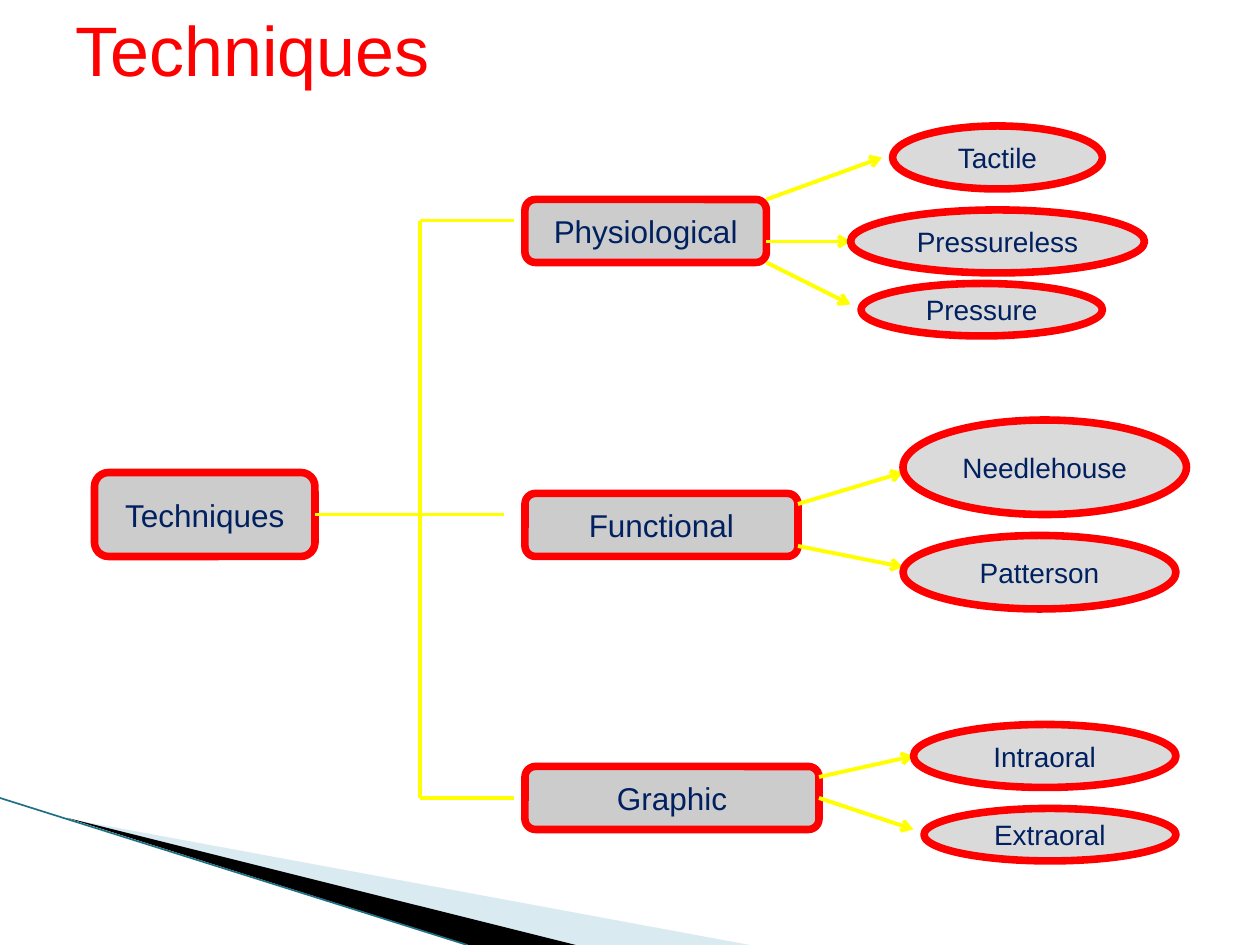
from lxml import etree
from pptx import Presentation
from pptx.dml.color import RGBColor
from pptx.enum.shapes import MSO_CONNECTOR, MSO_SHAPE
from pptx.enum.text import MSO_ANCHOR, PP_ALIGN
from pptx.oxml.ns import qn
from pptx.util import Inches, Pt

ROUNDED, OVAL = MSO_SHAPE.ROUNDED_RECTANGLE, MSO_SHAPE.OVAL
STRAIGHT = MSO_CONNECTOR.STRAIGHT
MIDDLE, TOP = MSO_ANCHOR.MIDDLE, MSO_ANCHOR.TOP
CENTER, LEFT = PP_ALIGN.CENTER, PP_ALIGN.LEFT

COLORS = {
    "title": "FF0000", "border": "FF0000", "text": "002060",
    "box": "CCCCCC", "oval": "DADADA", "link": "FFFF00",
    "pale": "A0CBDC", "black": "000000", "edge": "1F7084",
}
CELL = Inches(1) // 12  # the diagram sits on a grid of twelve cells per inch
TRUNK = 40

ROOT = ("Techniques", (9, 45, 21, 8))
# Branch: label, box (column, row, columns, rows), stem end, stem row, leaves.
# Leaf: label, oval, arrow start row, arrow tip (column, row).
BRANCHES = [
    ("Physiological", (50, 19, 23, 6), 49, 21, [
        ("Tactile", (85, 12, 20, 6), 19, (84, 15)),
        ("Pressureless", (81, 20, 28, 6), 23, (81, 23)),
        ("Pressure", (82, 27, 23, 5), 25, (81, 29)),
    ]),
    ("Functional", (50, 47, 26, 6), 48, 49, [
        ("Needlehouse", (86, 40, 27, 9), 48, (86, 45)),
        ("Patterson", (86, 51, 26, 7), 52, (86, 54)),
    ]),
    ("Graphic", (50, 73, 28, 6), 49, 76, [
        ("Intraoral", (87, 69, 25, 6), 74, (87, 72)),
        ("Extraoral", (88, 77, 24, 5), 76, (87, 79)),
    ]),
]
# Corner wedges in hundredths of an inch: colour, opacity in percent, points.
WEDGES = [
    ("pale", 40, [(55, 650), (595, 750), (456, 750)]),
    ("black", 100, [(53, 649), (457, 750), (372, 750)]),
]


def rgb(name):
    return RGBColor.from_string(COLORS[name])


def set_format(target, values):
    for attribute, value in values.items():
        setattr(target, attribute, value)


def write(shape, text, size, color, anchor, align, margin):
    frame = shape.text_frame
    frame.text = text
    set_format(frame, {
        "word_wrap": True, "vertical_anchor": anchor,
        "margin_left": margin, "margin_right": margin,
        "margin_top": margin // 2, "margin_bottom": margin // 2,
    })
    paragraph = frame.paragraphs[0]
    paragraph.alignment = align
    set_format(paragraph.font, {"name": "Arial", "size": Pt(size), "bold": False})
    paragraph.font.color.rgb = rgb(color)


def add_node(slide, preset, label, cells, fill, size):
    node = slide.shapes.add_shape(preset, *(CELL * n for n in cells))
    node.shadow.inherit = False
    node.fill.solid()
    node.fill.fore_color.rgb = rgb(fill)
    node.line.color.rgb = rgb("border")
    node.line.width = Pt(4.33)
    write(node, label, size, "text", MIDDLE, CENTER, 0)


def add_line(slide, start, end, color="link", width=2.25, arrow=False):
    """Join two (column, row) grid points."""
    line = slide.shapes.add_connector(
        STRAIGHT, *(round(CELL * n) for n in (*start, *end)))
    line.line.color.rgb = rgb(color)
    line.line.width = Pt(width)
    if arrow:
        outline = line.line._get_or_add_ln()
        etree.SubElement(outline, qn("a:tailEnd"), type="arrow")
    etree.SubElement(line._element.spPr, qn("a:effectLst"))


def add_wedge(slide, color, opacity, points):
    builder = slide.shapes.build_freeform(*points[0], scale=Inches(1) / 100)
    builder.add_line_segments(points[1:], close=True)
    wedge = builder.convert_to_shape()
    wedge.shadow.inherit = False
    wedge.fill.solid()
    wedge.fill.fore_color.rgb = rgb(color)
    wedge.line.fill.background()
    if opacity < 100:
        tint = wedge._element.spPr.find(qn("a:solidFill"))[0]
        etree.SubElement(tint, qn("a:alpha"), val=str(opacity * 1000))


def add_title(slide, text):
    title = slide.shapes.title
    set_format(title, {"left": Inches(0.5), "top": 0,
                       "width": Inches(9), "height": Inches(1.25)})
    write(title, text, 40, "title", TOP, LEFT, Inches(0.1))


def add_branch(slide, label, box, stem_end, stem_row, leaves):
    add_line(slide, (TRUNK, stem_row), (stem_end, stem_row))
    add_node(slide, ROUNDED, label, box, "box", 18)
    right = box[0] + box[2]
    for leaf, oval, start_row, tip in leaves:
        add_line(slide, (right, start_row), tip, arrow=True)
        add_node(slide, OVAL, leaf, oval, "oval", 16)


def main():
    deck = Presentation()
    set_format(deck, {"slide_width": Inches(10), "slide_height": Inches(7.5)})
    slide = deck.slides.add_slide(deck.slide_layouts[5])
    for wedge in WEDGES:
        add_wedge(slide, *wedge)
    add_line(slide, (0, 76), (44.5, 90), "edge", 0.95)
    add_title(slide, "Techniques")

    label, box = ROOT
    add_node(slide, ROUNDED, label, box, "box", 18)
    add_line(slide, (box[0] + box[2], 49), (TRUNK, 49))
    stem_rows = [branch[3] for branch in BRANCHES]
    add_line(slide, (TRUNK, min(stem_rows)), (TRUNK, max(stem_rows)))
    for branch in BRANCHES:
        add_branch(slide, *branch)
    deck.save("out.pptx")


if __name__ == "__main__":
    main()
